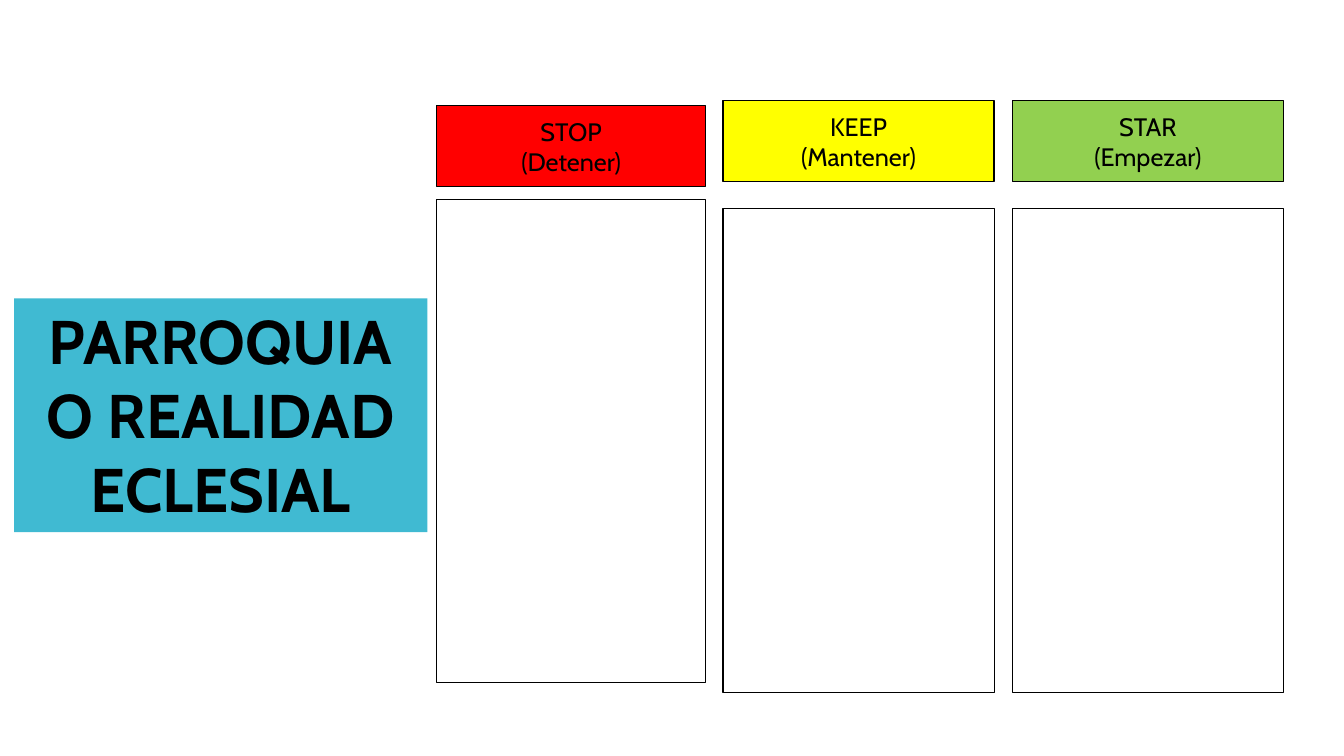
from pptx import Presentation
from pptx.dml.color import RGBColor
from pptx.enum import shapes, text
from pptx.util import Inches, Pt

BLACK = RGBColor(0x00, 0x00, 0x00)
WHITE = RGBColor(0xFF, 0xFF, 0xFF)
RED = RGBColor(0xFF, 0x00, 0x00)
YELLOW = RGBColor(0xFF, 0xFF, 0x00)
GREEN = RGBColor(0x92, 0xD0, 0x50)
TEAL = RGBColor(0x40, 0xBA, 0xD2)

presentation = Presentation()
presentation.slide_width = Inches(13.33)
presentation.slide_height = Inches(7.5)
slide = presentation.slides.add_slide(presentation.slide_layouts[6])


def add_box(left, top, width, height, fill, line_width=None):
    """Add a filled rectangle, outlined in black if line_width is given."""
    shape = slide.shapes.add_shape(
        shapes.MSO_SHAPE.RECTANGLE,
        Inches(left), Inches(top), Inches(width), Inches(height))
    shape.shadow.inherit = False
    shape.fill.solid()
    shape.fill.fore_color.rgb = fill
    if line_width is None:
        shape.line.fill.background()
    else:
        shape.line.color.rgb = BLACK
        shape.line.width = Pt(line_width)
    return shape


def write_lines(shape, lines, size, bold=False):
    """Write each line as a centred paragraph."""
    frame = shape.text_frame
    frame.word_wrap = True
    for index, line in enumerate(lines):
        paragraph = frame.add_paragraph() if index else frame.paragraphs[0]
        paragraph.alignment = text.PP_ALIGN.CENTER
        run = paragraph.add_run()
        run.text = line
        run.font.name = "Cabin"
        run.font.size = Pt(size)
        run.font.bold = bold
        run.font.color.rgb = BLACK


# heading, translation, colour, left, width, heading top, panel top, panel height
columns = [
    ("STOP", "(Detener)", RED, 4.33, 2.67, 1.05, 1.98, 4.79),
    ("KEEP", "(Mantener)", YELLOW, 7.17, 2.69, 1, 2.07, 4.8),
    ("STAR", "(Empezar)", GREEN, 10.04, 2.69, 1, 2.07, 4.8),
]
for heading, translation, color, left, width, top, panel_top, panel_height in columns:
    header = add_box(left, top, width, 0.8, color, 1)
    header.text_frame.vertical_anchor = text.MSO_ANCHOR.MIDDLE
    write_lines(header, [heading, translation], 18)
    add_box(left, panel_top, width, panel_height, WHITE, 0.85)

title = add_box(0.14, 2.96, 4.1, 2.32, TEAL)
title.text_frame.vertical_anchor = text.MSO_ANCHOR.TOP
title.text_frame.auto_size = text.MSO_AUTO_SIZE.SHAPE_TO_FIT_TEXT
write_lines(title, ["PARROQUIA", "O REALIDAD ECLESIAL"], 44, bold=True)

presentation.save("out.pptx")
